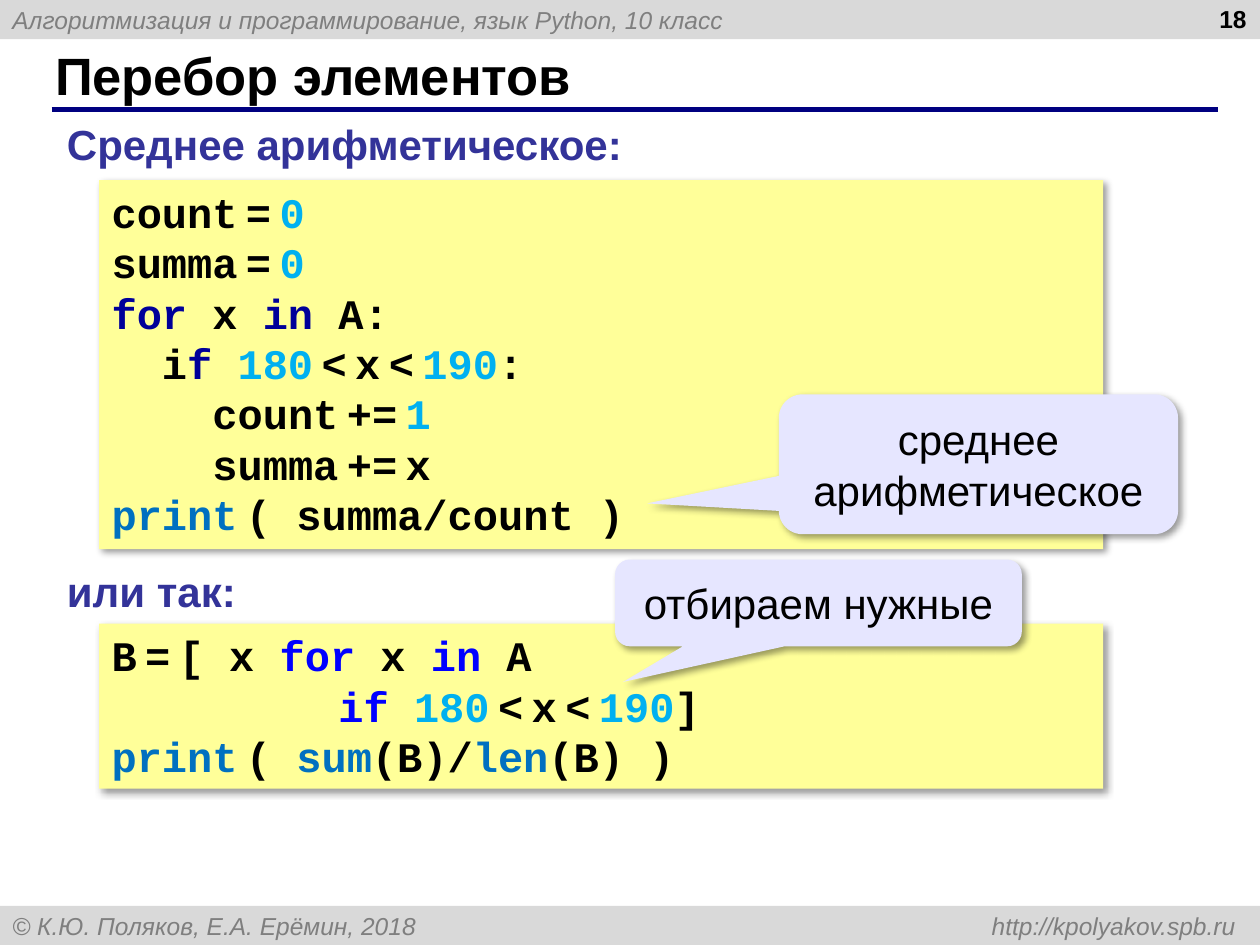
import itertools

import pptx
import pptx.dml.color
import pptx.enum.shapes
import pptx.enum.text
import pptx.oxml.ns
import pptx.util
from lxml import etree
from pptx.util import Cm, Pt

SHAPE = pptx.enum.shapes.MSO_SHAPE
ALIGN = pptx.enum.text.PP_ALIGN
ANCHOR = pptx.enum.text.MSO_ANCHOR
RGB = pptx.dml.color.RGBColor.from_string
qn = pptx.oxml.ns.qn


class Theme:
    # Fills and lines
    bar, rule, code_box, callout, shadow = "D9D9D9", "000080", "FFFF99", "E6E6FF", "000000"
    # Text colours
    text, muted, heading = "000000", "7F7F7F", "333399"
    keyword, bright, number, builtin = "000099", "0000FF", "00B0F0", "0070C0"
    # Text formats
    bar_font = dict(name="Arial", size=Pt(14), italic=True)
    page_font = dict(name="Arial", size=Pt(14), bold=True)
    title_font = dict(name="Arial", size=Pt(30), bold=True)
    heading_font = dict(name="Arial", size=Pt(24), bold=True)
    callout_font = dict(name="Arial", size=Pt(24))
    code_font = dict(name="Courier New", size=Pt(24), bold=True)
    narrow = Pt(8)  # size of the thin spaces around operators
    pitch = Pt(28.8)  # line pitch of code and callouts


T, K, F, N, B = Theme.text, Theme.keyword, Theme.bright, Theme.number, Theme.builtin

# Code lines as (text, colour) runs; "~" is a thin space
CONDITION = [("180~", N), ("<~x~<~", T), ("190", N)]
LOOP_CODE = [
    [("count~=~", T), ("0", N)],
    [("summa~=~", T), ("0", N)],
    [("for", K), (" x ", T), ("in", K), (" A:", T)],
    [("  i", T), ("f ", K), *CONDITION, (":", T)],
    [("    count~+=~", T), ("1", N)],
    [("    summa~+=~x", T)],
    [("print~", B), ("( summa/count )", T)],
]
LIST_CODE = [
    [("B~=~[ x ", T), ("for", F), (" x ", T), ("in", F), (" A", T)],
    [(" " * 9, T), ("if ", F), *CONDITION, ("]", T)],
    [("print~", B), ("( ", T), ("sum", B), ("(B)/", T), ("len", B), ("(B) )", T)],
]


def set_all(obj, values):
    for name, value in values.items():
        setattr(obj, name, value)


def add_run(p, text, font, color):
    r = p.add_run()
    r.text = text
    set_all(r.font, font)
    r.font.color.rgb = RGB(color)


def add_shadow(sp):
    effects = sp._element.spPr.find(qn("a:effectLst"))
    shadow = etree.SubElement(effects, qn("a:outerShdw"), blurRad=str(Pt(4)),
                              dist=str(Pt(3)), dir="2700000", algn="tl", rotWithShape="0")
    color = etree.SubElement(shadow, qn("a:srgbClr"), val=Theme.shadow)
    etree.SubElement(color, qn("a:alpha"), val="40000")


def add_filled(s, kind, box, fill, shadow=False):
    sp = s.shapes.add_shape(kind, *map(Cm, box))
    sp.shadow.inherit = False
    sp.fill.solid()
    sp.fill.fore_color.rgb = RGB(fill)
    sp.line.fill.background()
    if shadow:
        add_shadow(sp)
    return sp


def add_bar(s, top, text, tab=None):
    sp = add_filled(s, SHAPE.RECTANGLE, (0, top, 25.4, 0.79), Theme.bar)
    set_all(sp.text_frame, dict(vertical_anchor=ANCHOR.MIDDLE, word_wrap=True))
    p = sp.text_frame.paragraphs[0]
    p.alignment = ALIGN.LEFT
    if tab:
        tabs = etree.SubElement(p._p.get_or_add_pPr(), qn("a:tabLst"))
        etree.SubElement(tabs, qn("a:tab"), pos=str(Cm(tab)), algn="r")
    add_run(p, text, Theme.bar_font, Theme.muted)


def add_text(s, box, text, font, color, align=ALIGN.LEFT, anchor=ANCHOR.TOP, wrap=True):
    tf = s.shapes.add_textbox(*map(Cm, box)).text_frame
    set_all(tf, dict(word_wrap=wrap, vertical_anchor=anchor))
    p = tf.paragraphs[0]
    p.alignment = align
    add_run(p, text, font, color)


def add_heading(s, top, width, text):
    add_text(s, (1.1, top, width, 1.3), text, Theme.heading_font, Theme.heading,
             anchor=ANCHOR.MIDDLE, wrap=False)


def add_code(s, top, height, lines):
    sp = add_filled(s, SHAPE.RECTANGLE, (2, top, 20.24, height), Theme.code_box, True)
    tf = sp.text_frame
    set_all(tf, dict(word_wrap=True, vertical_anchor=ANCHOR.TOP))
    for i, line in enumerate(lines):
        p = tf.add_paragraph() if i else tf.paragraphs[0]
        set_all(p, dict(alignment=ALIGN.JUSTIFY, line_spacing=Theme.pitch))
        set_all(p._p.get_or_add_pPr(), dict(marL=Cm(0.5), indent=Cm(-0.25)))
        for text, color in line:
            for thin, chars in itertools.groupby(text, lambda c: c == "~"):
                size = Theme.narrow if thin else Theme.code_font["size"]
                add_run(p, "".join(chars).replace("~", " "),
                        {**Theme.code_font, "size": size}, color)


def add_callout(s, box, tip, text):
    sp = add_filled(s, SHAPE.ROUNDED_RECTANGULAR_CALLOUT, box, Theme.callout, True)
    for i, value in enumerate((*tip, 0.17)):
        sp.adjustments[i] = value
    set_all(sp.text_frame, dict(word_wrap=True, vertical_anchor=ANCHOR.MIDDLE))
    p = sp.text_frame.paragraphs[0]
    set_all(p, dict(alignment=ALIGN.CENTER, line_spacing=Theme.pitch))
    add_run(p, text, Theme.callout_font, Theme.text)


def add_rule(s, left, right, y):
    line = s.shapes.add_connector(pptx.enum.shapes.MSO_CONNECTOR.STRAIGHT,
                                  Cm(left), Cm(y), Cm(right), Cm(y))
    line.line.color.rgb = RGB(Theme.rule)
    line.line.width = Pt(3)
    etree.SubElement(line._element.spPr, qn("a:effectLst"))


def main():
    prs = pptx.Presentation()
    set_all(prs, dict(slide_width=Cm(25.4), slide_height=Cm(19.05)))
    s = prs.slides.add_slide(prs.slide_layouts[6])

    # Header, footer and title
    add_bar(s, 0, "Алгоритмизация и программирование, язык Python, 10 класс")
    add_bar(s, 18.26, "© К.Ю. Поляков, Е.А. Ерёмин, 2018\thttp://kpolyakov.spb.ru", tab=24.66)
    add_rule(s, 1.04, 24.56, 2.21)
    add_text(s, (0.86, 0.84, 23.27, 1.32), "Перебор элементов", Theme.title_font,
             Theme.text, anchor=ANCHOR.MIDDLE)
    add_text(s, (19.46, -0.05, 5.92, 1.32), "18", Theme.page_font, Theme.text, ALIGN.RIGHT)

    # Loop version
    add_heading(s, 2.24, 11.81, "Среднее арифметическое:")
    add_code(s, 3.63, 7.44, LOOP_CODE)
    add_callout(s, (15.7, 7.95, 8.05, 2.82), (-0.83, 0.28), "среднее арифметическое")

    # List version
    add_heading(s, 11.25, 3.96, "или так:")
    add_code(s, 12.57, 3.33, LIST_CODE)
    add_callout(s, (12.4, 11.28, 8.2, 1.75), (-0.48, 0.91), "отбираем нужные")

    prs.save("out.pptx")


if __name__ == "__main__":
    main()
